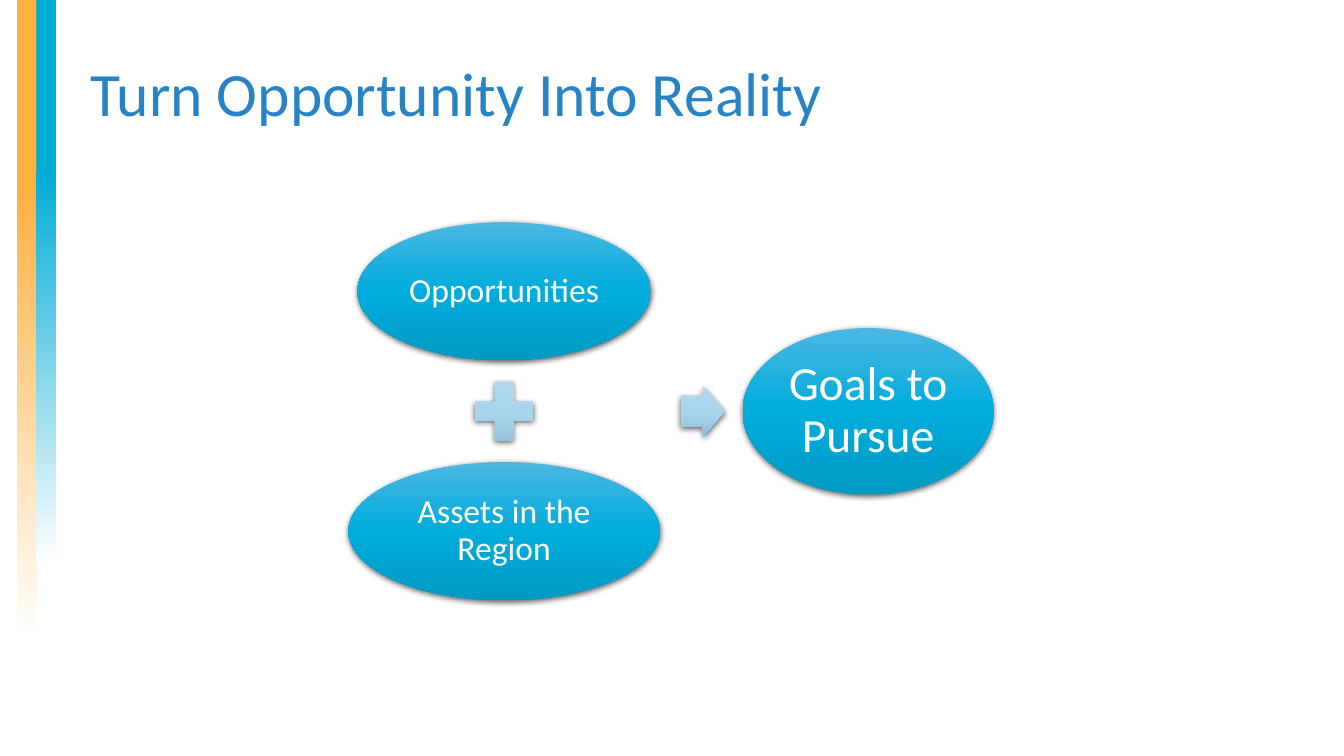
from dataclasses import dataclass

from lxml import etree
from pptx import Presentation
from pptx.dml.color import RGBColor
from pptx.enum.shapes import MSO_SHAPE
from pptx.enum.text import MSO_ANCHOR, MSO_AUTO_SIZE, PP_ALIGN
from pptx.oxml.ns import qn
from pptx.util import Inches, Pt


@dataclass(frozen=True)
class Theme:
    font: str = "Calibri"
    title_color: str = "2683C6"
    text_color: str = "FFFFFF"
    title_size: int = 44
    input_size: int = 24
    goal_size: int = 34
    # Gradient stops: (percent, colour)
    orange_bar: tuple = ((29, "FCB040"), (100, "FFFFFF"))
    blue_bar: tuple = ((30, "00ABD6"), (100, "FFFFFF"))
    ellipse: tuple = ((0, "4BB6E2"), (50, "00ADDC"), (100, "009AC3"))
    operator: tuple = ((0, "B7D9EE"), (50, "A8D4EE"), (100, "91BDD8"))


THEME = Theme()


def add_gradient_shape(kind, center_x, center_y, width, height, stops, angle):
    """Add a borderless gradient shape around a centre given in inches."""
    shape = slide.shapes.add_shape(
        kind, Inches(center_x - width / 2), Inches(center_y - height / 2),
        Inches(width), Inches(height))
    shape.shadow.inherit = False
    shape.line.fill.background()
    shape.fill.gradient()
    shape.fill.gradient_angle = angle
    stop_list = shape.element.spPr.find(qn("a:gradFill")).find(qn("a:gsLst"))
    for old_stop in list(stop_list):
        stop_list.remove(old_stop)
    for percent, color in stops:
        stop = etree.SubElement(stop_list, qn("a:gs"), pos=str(percent * 1000))
        etree.SubElement(stop, qn("a:srgbClr"), val=color)
    return shape


def write_text(frame, text, size, color, alignment):
    frame.text = text
    frame.word_wrap = True
    frame.auto_size = MSO_AUTO_SIZE.NONE
    frame.vertical_anchor = MSO_ANCHOR.MIDDLE
    para = frame.paragraphs[0]
    para.alignment = alignment
    para.line_spacing = 0.9
    para.font.name = THEME.font
    para.font.size = Pt(size)
    para.font.color.rgb = RGBColor.from_string(color)


deck = Presentation()
deck.slide_width, deck.slide_height = Inches(13.33), Inches(7.5)
slide = deck.slides.add_slide(deck.slide_layouts[5])

# Fading bars at the left edge, turned to run downwards from the top
for center_x, length, stops in ((0.27, 6.33, THEME.orange_bar),
                                (0.46, 5.6, THEME.blue_bar)):
    bar = add_gradient_shape(MSO_SHAPE.RECTANGLE, center_x, length / 2,
                             length, 0.2, stops, 0)
    bar.rotation = 90

# Title
title = slide.shapes.title
title.left, title.top = Inches(0.8), Inches(0.23)
title.width, title.height = Inches(12.21), Inches(1.45)
write_text(title.text_frame, "Turn Opportunity Into Reality",
           THEME.title_size, THEME.title_color, PP_ALIGN.LEFT)

# Equation: two inputs stacked around a plus, then an arrow to the goals
column_x, middle_y, input_offset = 5.0, 4.08, 1.19
equation = (
    (MSO_SHAPE.OVAL, column_x, middle_y - input_offset, 2.91, 1.37,
     "Opportunities", THEME.input_size, 0.03),
    (MSO_SHAPE.MATH_PLUS, column_x, middle_y, 0.79, 0.79, "", 0, 0),
    (MSO_SHAPE.OVAL, column_x, middle_y + input_offset, 3.09, 1.37,
     "Assets in the Region", THEME.input_size, 0.03),
    (MSO_SHAPE.RIGHT_ARROW, 6.97, middle_y, 0.44, 0.51, "", 0, 0),
    (MSO_SHAPE.OVAL, 8.61, middle_y, 2.49, 1.65,
     "Goals to Pursue", THEME.goal_size, 0.05),
)
for kind, center_x, center_y, width, height, text, size, inset in equation:
    stops = THEME.ellipse if text else THEME.operator
    shape = add_gradient_shape(kind, center_x, center_y, width, height, stops, 270)
    if kind == MSO_SHAPE.RIGHT_ARROW:
        shape.adjustments[0] = 0.6

    # Soft shadow below the shape
    effects = shape.element.spPr.find(qn("a:effectLst"))
    shadow = etree.SubElement(
        effects, qn("a:outerShdw"), blurRad=str(Pt(4.5)), dist=str(Pt(1.5)),
        dir="5400000", algn="ctr", rotWithShape="0")
    shadow_color = etree.SubElement(shadow, qn("a:srgbClr"), val="000000")
    etree.SubElement(shadow_color, qn("a:alpha"), val="63000")

    if text:
        frame = shape.text_frame
        frame.margin_left = frame.margin_right = Inches(inset)
        frame.margin_top = frame.margin_bottom = Inches(inset)
        write_text(frame, text, size, THEME.text_color, PP_ALIGN.CENTER)

deck.save("out.pptx")
